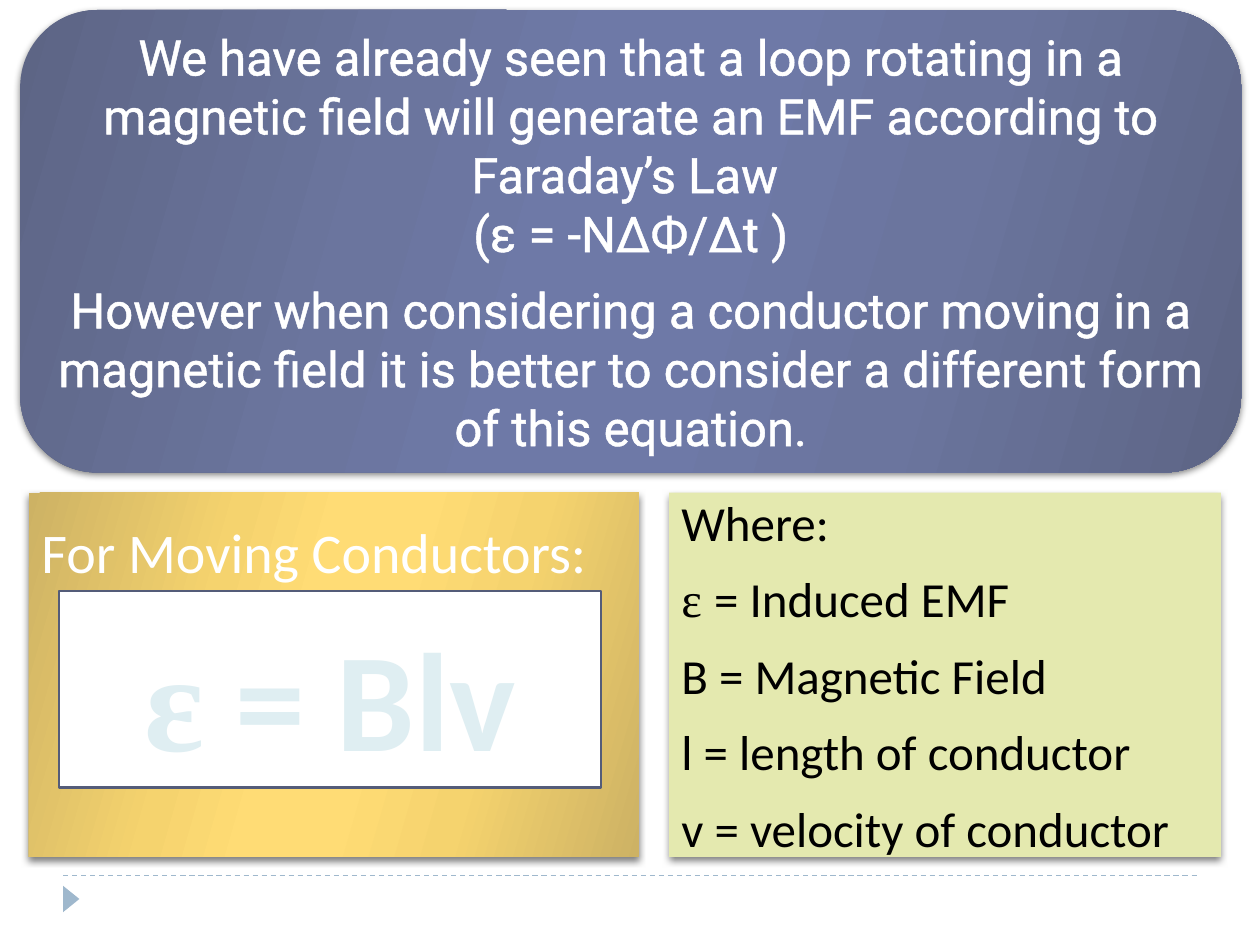
from lxml import etree
from pptx import Presentation
from pptx.dml.color import RGBColor
from pptx.enum import dml, shapes, text
from pptx.oxml import parse_xml
from pptx.oxml.ns import nsdecls
from pptx.util import Inches, Pt

BLUE = ("5D6585", "6B759E", "6E79A7")
GOLD = ("CDB264", "F5D36E", "FFDC75")
CENTER, LEFT = text.PP_ALIGN.CENTER, text.PP_ALIGN.LEFT
SHAPE = shapes.MSO_SHAPE


def rgb(value):
    return RGBColor.from_string(value)


def gradient_fill(shape, tones):
    """Fill from dark edges to a light middle, mirrored about the centre."""
    edge, mid, light = tones
    stops = zip((0, 30, 45, 55, 73, 100), (edge, mid, light, light, mid, edge))
    marks = "".join(f'<a:gs pos="{pos * 1000}"><a:srgbClr val="{color}"/></a:gs>'
                    for pos, color in stops)
    shape.fill.background()
    no_fill = shape._element.spPr.find("{*}noFill")
    no_fill.getparent().replace(no_fill, parse_xml(
        f'<a:gradFill {nsdecls("a")} rotWithShape="1"><a:gsLst>{marks}</a:gsLst>'
        f'<a:lin ang="{16 * 60000}" scaled="0"/></a:gradFill>'))


def drop_shadow(shape):
    effects = shape._element.spPr.find("{*}effectLst")
    effects.append(parse_xml(
        f'<a:outerShdw {nsdecls("a")} blurRad="{Pt(4)}" dist="{Pt(2)}" dir="5400000" '
        'rotWithShape="0"><a:srgbClr val="000000"><a:alpha val="50000"/></a:srgbClr>'
        '</a:outerShdw>'))


def add_panel(slide, box, fill, kind=SHAPE.RECTANGLE, shadow=True):
    panel = slide.shapes.add_shape(kind, *map(Inches, box))
    panel.shadow.inherit = False
    panel.line.fill.background()
    if isinstance(fill, tuple):
        gradient_fill(panel, fill)
    else:
        panel.fill.solid()
        panel.fill.fore_color.rgb = rgb(fill)
    if shadow:
        drop_shadow(panel)
    return panel


def write(panel, paragraphs, color, align=LEFT, frame_format=None, **font_format):
    """Write paragraphs, each a list of (text, font name) runs."""
    frame = panel.text_frame
    settings = {"word_wrap": True, "vertical_anchor": text.MSO_ANCHOR.MIDDLE}
    for key, value in (settings | (frame_format or {})).items():
        setattr(frame, key, value)
    for index, runs in enumerate(paragraphs):
        paragraph = frame.paragraphs[0] if index == 0 else frame.add_paragraph()
        paragraph.alignment = align
        paragraph.space_after = Pt(10)
        for words, font_name in runs:
            for number, line in enumerate(words.split("\n")):
                if number:
                    paragraph.add_line_break()
                run = paragraph.add_run()
                run.text = line
                run.font.color.rgb = rgb(color)
                for key, value in (font_format | {"name": font_name}).items():
                    setattr(run.font, key, value)


def outline_text(panel, color):
    for paragraph in panel.text_frame.paragraphs:
        for run in paragraph.runs:
            run.font._element.insert(0, parse_xml(
                f'<a:ln {nsdecls("a")} w="{Pt(2.25)}"><a:solidFill>'
                f'<a:srgbClr val="{color}"/></a:solidFill></a:ln>'))


def add_introduction(slide, box):
    intro = add_panel(slide, box, BLUE, SHAPE.ROUNDED_RECTANGLE)
    write(intro, [
        [("We have already seen that a loop rotating in a magnetic field will generate "
          "an EMF according to Faraday’s Law \n(ε = -NΔФ/Δt )", "Roboto")],
        [("However when considering a conductor moving in a magnetic field it is better "
          "to consider a different form of this equation.", "Roboto")],
    ], "FFFFFF", CENTER, size=Pt(28))
    outline_text(intro, "FFFFFF")


def add_formula(slide, box):
    left, top, width, height = box
    card = add_panel(slide, box, GOLD)
    write(card, [[("For Moving Conductors:", "Calibri")]], "FFFFFF", size=Pt(32),
          frame_format={"vertical_anchor": text.MSO_ANCHOR.TOP, "margin_top": Inches(0.2)})
    formula = add_panel(slide, (left + 0.24, top + 0.78, width - 0.54, 1.56), "FFFFFF",
                        shadow=False)
    formula.line.color.rgb = rgb("545C79")
    formula.line.width = Pt(1.5)
    write(formula, [[("ε", "Times New Roman"), (" = Blv", "Calibri")]], "DFEEF2", CENTER,
          size=Pt(80), bold=True, frame_format={"margin_top": Inches(0.15)})


def add_symbols(slide, box):
    meanings = ("B = Magnetic Field", "l = length of conductor", "v = velocity of conductor")
    write(add_panel(slide, box, "E4E9AF"), [
        [("Where:", "Calibri")],
        [("ε ", "Times New Roman"), ("= Induced EMF", "Calibri")],
        *([(meaning, "Calibri")] for meaning in meanings),
    ], "000000", size=Pt(28))


def add_footer(slide, left, top, width):
    rule = slide.shapes.add_connector(
        shapes.MSO_CONNECTOR.STRAIGHT, *map(Inches, (left, top, left + width, top)))
    rule.line.color.rgb = rgb("9FB8CD")
    rule.line.width = Pt(0.75)
    rule.line.dash_style = dml.MSO_LINE.DASH
    etree.SubElement(rule._element.spPr,
                     "{http://schemas.openxmlformats.org/drawingml/2006/main}effectLst")
    marker = add_panel(slide, (left - 0.04, top + 0.12, 0.21, 0.13), "9FB8CD",
                       SHAPE.ISOSCELES_TRIANGLE, shadow=False)
    marker.rotation = 90


def main():
    prs = Presentation()
    prs.slide_width, prs.slide_height = Inches(10), Inches(7.5)
    slide = prs.slides.add_slide(prs.slide_layouts[6])
    add_footer(slide, 0.5, 6.95, 9)
    add_introduction(slide, (0.16, 0.08, 9.69, 3.67))
    add_formula(slide, (0.23, 3.91, 4.84, 2.89))
    add_symbols(slide, (5.31, 3.91, 4.38, 2.89))
    prs.save("out.pptx")


if __name__ == "__main__":
    main()
